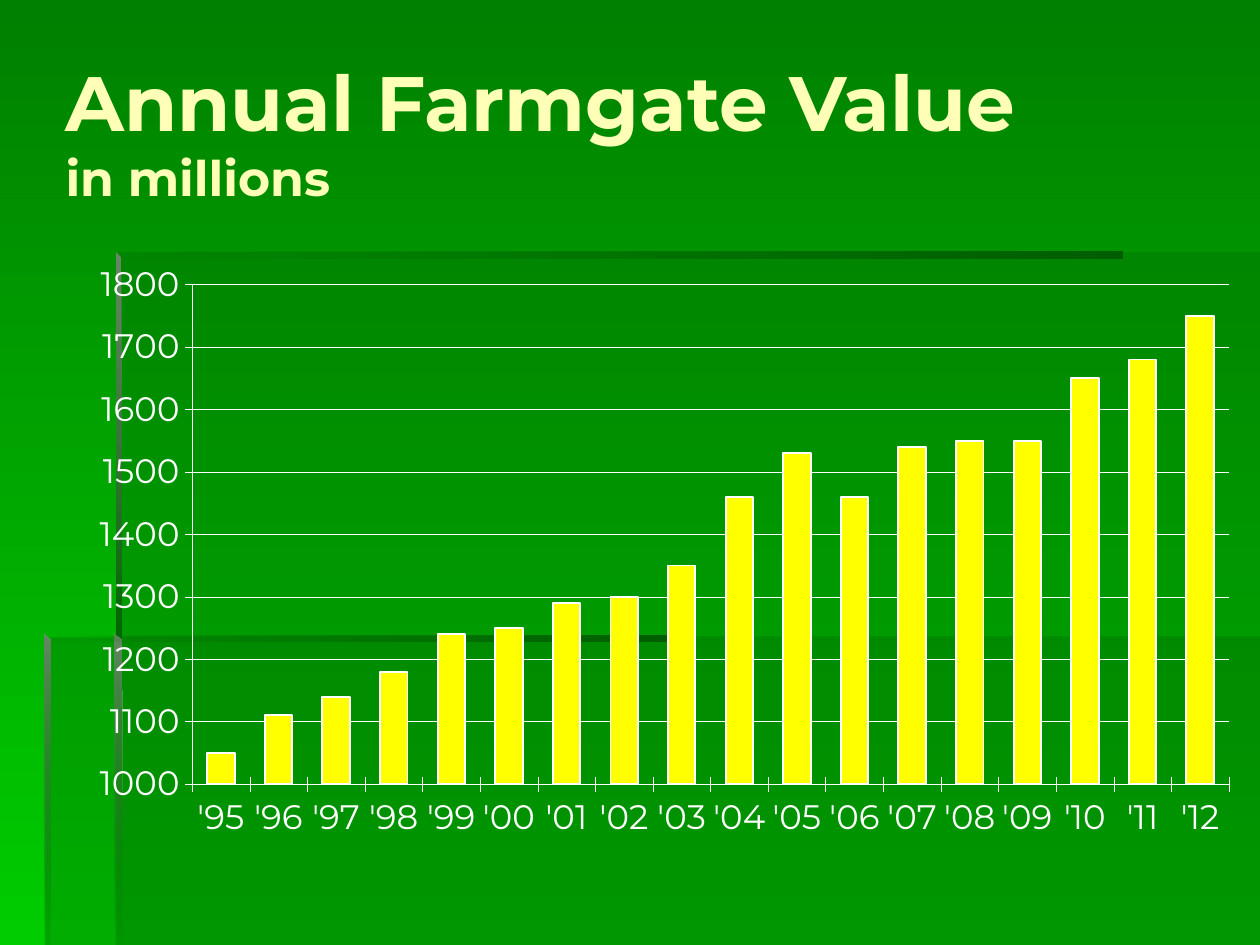
"""Build a slide with a column chart of annual farmgate value."""
from lxml.etree import SubElement
from pptx import Presentation
from pptx.chart.data import CategoryChartData
from pptx.dml.color import RGBColor
from pptx.enum.chart import XL_CHART_TYPE, XL_TICK_MARK
from pptx.enum.text import MSO_ANCHOR, MSO_AUTO_SIZE, PP_ALIGN
from pptx.oxml import parse_xml
from pptx.oxml.ns import nsdecls, qn
from pptx.util import Inches, Pt

THEME = {
    "font": "Montserrat",
    "title": RGBColor.from_string("FFFFB7"),
    "text": RGBColor.from_string("FFFFFF"),
    "bar": RGBColor.from_string("FFFF00"),
    "background": ("008000", "00CC00"),
    "panel": "006600",
    "shade": "005E00",
    "highlight": "668666",
    "title_sizes": (Pt(44), Pt(28)),
    "chart_size": Pt(19.4),
    "axis_line": Pt(0.27),
    "bar_line": Pt(1.08),
}


def set_gradient(fill, stops, angle):
    fill.gradient()
    fill.gradient_angle = angle
    for stop, (color, opacity) in zip(fill.gradient_stops, stops):
        stop.color.rgb = RGBColor.from_string(color)
    for element, (color, opacity) in zip(fill._xPr.iter(qn("a:srgbClr")), stops):
        SubElement(element, qn("a:alpha"), val=str(opacity * 1000))


def add_outline(slide, unit, points):
    builder = slide.shapes.build_freeform(*points[0], scale=unit)
    builder.add_line_segments(points[1:], close=True)
    shape = builder.convert_to_shape()
    shape.shadow.inherit = False
    shape.line.fill.background()
    return shape


presentation = Presentation()
presentation.slide_width = Inches(10)
presentation.slide_height = Inches(7.5)
unit = presentation.slide_width // 1000
slide = presentation.slides.add_slide(presentation.slide_layouts[5])
set_gradient(slide.background.fill, [(color, 100) for color in THEME["background"]], 270)

panels = [
    [(92, 505), (92, 750), (1000, 750), (1000, 505)],
    [(94, 506), (36, 506), (36, 750), (1000, 750), (1000, 200), (94, 200)],
]
for points in panels:
    panel = add_outline(slide, unit, points)
    panel.fill.solid()
    panel.fill.fore_color.rgb = RGBColor.from_string(THEME["panel"])
    SubElement(next(panel._element.spPr.iter(qn("a:srgbClr"))), qn("a:alpha"), val="30000")

across = [(THEME["panel"], 0), (THEME["shade"], 100)]
edges = [
    ([(92, 200), (92, 205), (891, 205), (891, 200)], across, 0),
    ([(92, 200), (92, 510), (97, 510), (96, 204)],
     [(THEME["highlight"], 100), (THEME["panel"], 100)], 270),
    ([(91, 750), (97, 750), (96, 508), (91, 504)],
     [(THEME["highlight"], 100), (THEME["panel"], 0)], 270),
    ([(35, 504), (35, 509), (535, 509), (535, 504)], across, 0),
    ([(35, 504), (35, 750), (40, 750), (40, 509)],
     [(THEME["highlight"], 100), (THEME["panel"], 10)], 270),
]
for points, stops, angle in edges:
    set_gradient(add_outline(slide, unit, points).fill, stops, angle)

title = slide.shapes.title
title.left, title.top, title.width, title.height = (unit * n for n in (42, 25, 917, 157))
text_frame = title.text_frame
text_frame.text = "Annual Farmgate Value\vin millions"
text_frame.auto_size = MSO_AUTO_SIZE.NONE
text_frame.word_wrap = True
text_frame.vertical_anchor = MSO_ANCHOR.MIDDLE
paragraph = text_frame.paragraphs[0]
paragraph.alignment = PP_ALIGN.LEFT
for run, size in zip(paragraph.runs, THEME["title_sizes"]):
    run.font.name = THEME["font"]
    run.font.size = size
    run.font.bold = True
    run.font.color.rgb = THEME["title"]
slide.shapes._spTree.append(title._element)

chart_data = CategoryChartData()
chart_data.categories = [f"'{year % 100:02d}" for year in range(1995, 2013)]
chart_data.add_series("Series 1", [
    1050, 1110, 1140, 1180, 1240, 1250, 1290, 1300, 1350,
    1460, 1530, 1460, 1540, 1550, 1550, 1650, 1680, 1750,
])
chart = slide.shapes.add_chart(
    XL_CHART_TYPE.COLUMN_CLUSTERED, *(unit * n for n in (50, 183, 932, 511)), chart_data
).chart
chart.has_legend = False
chart.has_title = False
value_axis = chart.value_axis
value_axis.minimum_scale, value_axis.maximum_scale = 1000, 1800
value_axis.major_unit = 100
value_axis.has_major_gridlines = True
for axis in (chart.category_axis, value_axis):
    axis.major_tick_mark = XL_TICK_MARK.CROSS
    axis.minor_tick_mark = XL_TICK_MARK.NONE
for font in (chart.font, chart.category_axis.tick_labels.font, value_axis.tick_labels.font):
    font.name = THEME["font"]
    font.size = THEME["chart_size"]
    font.bold = False
    font.color.rgb = THEME["text"]
for target in (chart.category_axis, value_axis, value_axis.major_gridlines):
    target.format.line.color.rgb = THEME["text"]
    target.format.line.width = THEME["axis_line"]

plot = chart.plots[0]
plot.gap_width = 110
plot.vary_by_categories = False
series = plot.series[0]
series.format.fill.solid()
series.format.fill.fore_color.rgb = THEME["bar"]
series.format.line.color.rgb = THEME["text"]
series.format.line.width = THEME["bar_line"]

plot_area = chart._chartSpace.chart.plotArea
for old_layout in plot_area.findall(qn("c:layout")):
    plot_area.remove(old_layout)
layout = parse_xml(f"<c:layout {nsdecls('c')}/>")
manual = SubElement(layout, qn("c:manualLayout"))
settings = {"layoutTarget": "inner", "xMode": "edge", "yMode": "edge",
            "x": "0.11", "y": "0.084", "w": "0.883", "h": "0.776"}
for name, value in settings.items():
    SubElement(manual, qn(f"c:{name}"), val=value)
plot_area.insert(0, layout)

presentation.save("out.pptx")
